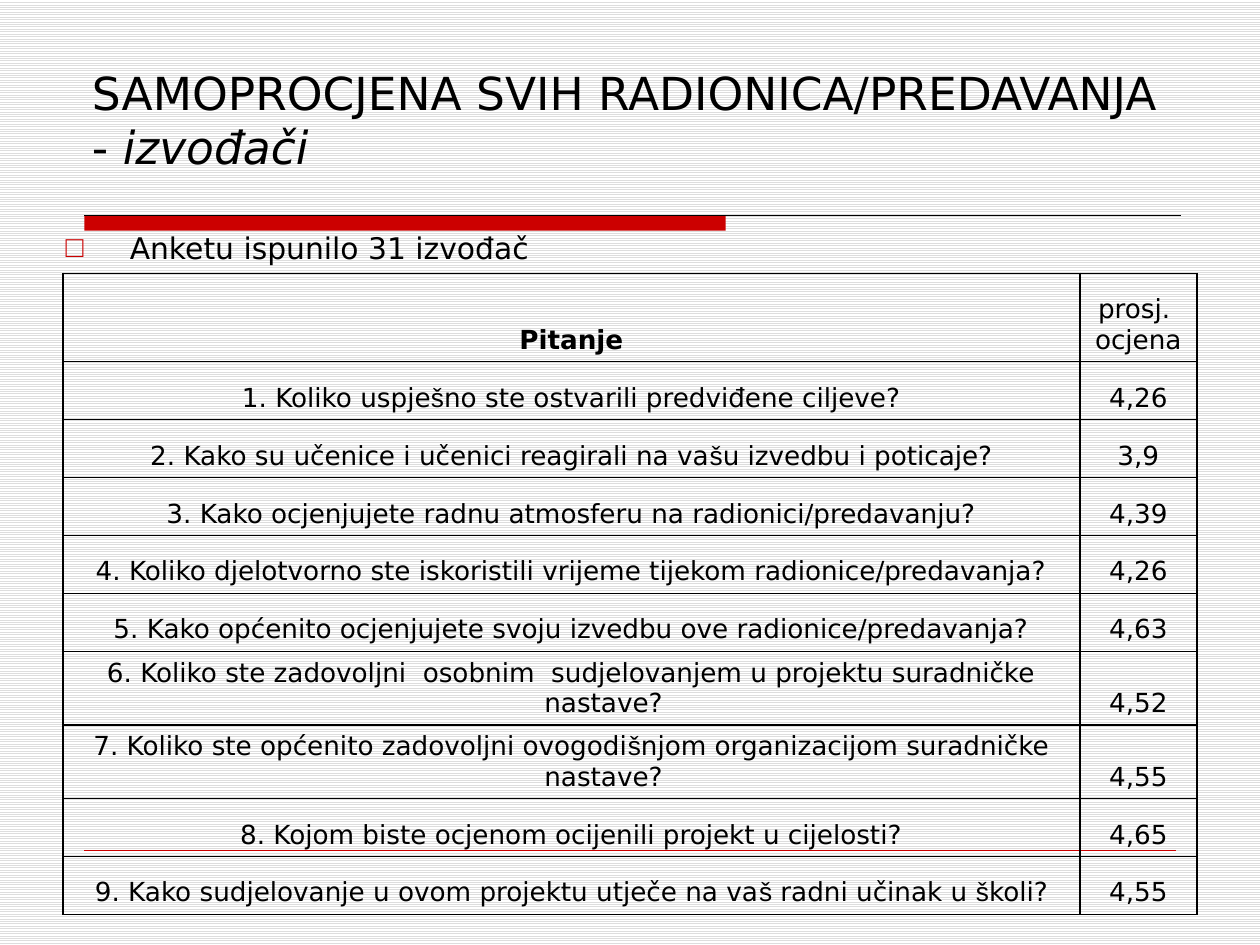
from itertools import groupby

from lxml.etree import SubElement
from pptx import Presentation
from pptx.dml.color import RGBColor
from pptx.enum.dml import MSO_PATTERN
from pptx.enum.shapes import MSO_CONNECTOR, MSO_SHAPE
from pptx.enum.text import MSO_ANCHOR, MSO_AUTO_SIZE, PP_ALIGN
from pptx.oxml import parse_xml
from pptx.oxml.ns import nsdecls, qn
from pptx.util import Inches, Pt

COLORS = {"ink": "000000", "accent": "CC0000", "stripe": "DDDDDD", "paper": "FFFFFF"}
FONT = "DejaVu Sans"
INDENT = Inches(0.51)
ROWS = [
    ("Pitanje", "prosj. \nocjena", 0.7),
    ("1. Koliko uspješno ste ostvarili predviđene ciljeve?", "4,26", 0.46),
    ("2. Kako su učenice i učenici reagirali na vašu izvedbu i poticaje?", "3,9", 0.46),
    ("3. Kako ocjenjujete radnu atmosferu na radionici/predavanju?", "4,39", 0.46),
    ("4. Koliko djelotvorno ste iskoristili vrijeme tijekom radionice/predavanja?", "4,26", 0.46),
    ("5. Kako općenito ocjenjujete svoju izvedbu ove radionice/predavanja?", "4,63", 0.46),
    ("6. Koliko ste zadovoljni  osobnim  sudjelovanjem u projektu suradničke nastave?", "4,52", 0.58),
    ("7. Koliko ste općenito zadovoljni ovogodišnjom organizacijom suradničke nastave?", "4,55", 0.58),
    ("8. Kojom biste ocjenom ocijenili projekt u cijelosti?", "4,65", 0.46),
    ("9. Kako sudjelovanje u ovom projektu utječe na vaš radni učinak u školi?", "4,55", 0.46),
]


def style(p, size, align):
    p.alignment = align
    p.font.size = Pt(size)
    p.font.name = FONT
    p.font.color.rgb = RGBColor.from_string(COLORS["ink"])


def hang(p):
    """Give the paragraph a hanging indent and return its properties."""
    pPr = p._p.get_or_add_pPr()
    pPr.set("marL", str(INDENT))
    pPr.set("indent", str(-INDENT))
    return pPr


prs = Presentation()
prs.slide_width, prs.slide_height = Inches(10), Inches(7.5)
s = prs.slides.add_slide(prs.slide_layouts[1])
bg = s.background.fill
bg.patterned()
bg.pattern = MSO_PATTERN.LIGHT_HORIZONTAL
bg.fore_color.rgb = RGBColor.from_string(COLORS["stripe"])
bg.back_color.rgb = RGBColor.from_string(COLORS["paper"])

# Title and list
title, body = s.shapes.title, s.placeholders[1]
for sp, box, anchor in (
    (title, (0.63, 0.33, 8.75, 1.1), MSO_ANCHOR.BOTTOM),
    (body, (0.42, 1.83, 9, 0.33), MSO_ANCHOR.TOP),
):
    sp.left, sp.top, sp.width, sp.height = map(Inches, box)
    sp.text_frame.auto_size = MSO_AUTO_SIZE.NONE
    sp.text_frame.vertical_anchor = anchor

p = title.text_frame.paragraphs[0]
style(p, 26, PP_ALIGN.LEFT)
p.add_run().text = "SAMOPROCJENA SVIH RADIONICA/PREDAVANJA - "
r = p.add_run()
r.text = "izvođači"
r.font.italic = True

p = body.text_frame.paragraphs[0]
p.text = "Anketu ispunilo 31 izvođač"
style(p, 17, PP_ALIGN.LEFT)
p.line_spacing = 0.8
p.space_before = Pt(3.4)
pPr = hang(p)
bullet_color = parse_xml(
    f'<a:buClr {nsdecls("a")}><a:srgbClr val="{COLORS["accent"]}"/></a:buClr>')
bullet = parse_xml(f'<a:buChar {nsdecls("a")} char="□"/>')
defaults = pPr.find(qn("a:defRPr"))
defaults.addprevious(bullet_color)
defaults.addprevious(bullet)

# Bar and rules
bar = s.shapes.add_shape(MSO_SHAPE.RECTANGLE, Inches(0.67), Inches(1.71), Inches(5.09), Inches(0.12))
bar.shadow.inherit = False
bar.fill.solid()
bar.fill.fore_color.rgb = RGBColor.from_string(COLORS["accent"])
bar.line.fill.background()
for right, y, color, width in ((9.37, 1.71, "ink", 0.75), (9.33, 6.75, "accent", 0.25)):
    rule = s.shapes.add_connector(
        MSO_CONNECTOR.STRAIGHT, Inches(0.67), Inches(y), Inches(right), Inches(y))
    rule.line.color.rgb = RGBColor.from_string(COLORS[color])
    rule.line.width = Pt(width)
    SubElement(rule._element.spPr, qn("a:effectLst"))

# Table of questions and average marks
height = sum(row[2] for row in ROWS)
table = s.shapes.add_table(
    len(ROWS), 2, Inches(0.5), Inches(2.17), Inches(9), Inches(height)).table
table.first_row = table.horz_banding = False
table.columns[0].width, table.columns[1].width = Inches(8.07), Inches(0.93)
for i, (question, mark, row_height) in enumerate(ROWS):
    table.rows[i].height = Inches(row_height)
    for j, text in enumerate((question, mark)):
        cell = table.cell(i, j)
        cell.vertical_anchor = MSO_ANCHOR.BOTTOM
        cell.fill.background()
        tcPr = cell._tc.get_or_add_tcPr()
        for k, side in enumerate("LRTB"):
            tcPr.insert(k, parse_xml(
                f'<a:ln{side} {nsdecls("a")} w="{Pt(1)}"><a:solidFill>'
                f'<a:srgbClr val="{COLORS["ink"]}"/></a:solidFill></a:ln{side}>'))
        tf = cell.text_frame
        for n, line in enumerate(text.split("\n")):
            p = tf.add_paragraph() if n else tf.paragraphs[0]
            style(p, 15, PP_ALIGN.CENTER)
            hang(p)
            p.font.bold = i == 0 and j == 0
            for is_caron, letters in groupby(line, lambda c: c == "š"):
                r = p.add_run()
                r.text = "".join(letters)
                if is_caron:
                    r.font.name = "Arial"

prs.save("out.pptx")
